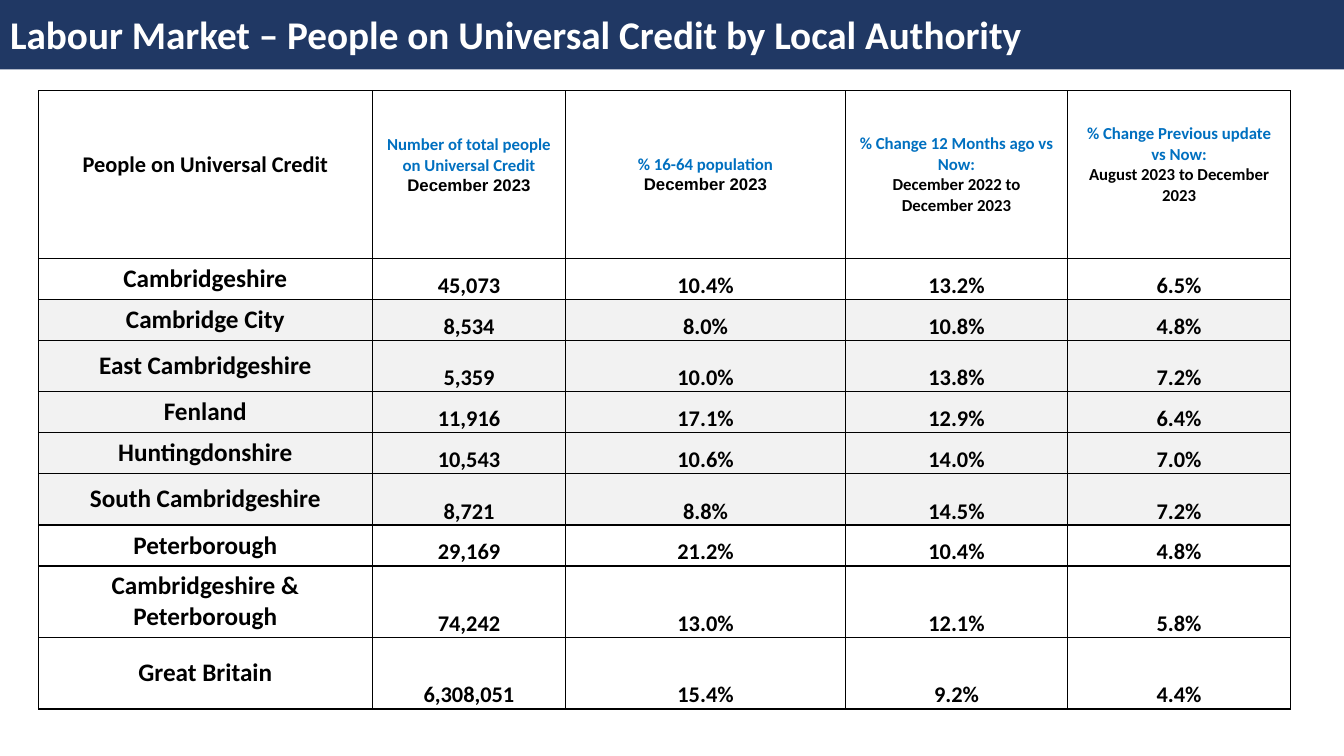
from lxml import etree
from pptx import Presentation
from pptx.dml.color import RGBColor
from pptx.enum.text import MSO_ANCHOR as ANCHOR, MSO_AUTO_SIZE as FIT, PP_ALIGN as ALIGN
from pptx.oxml.ns import qn
from pptx.util import Cm, Pt

# Content
TITLE = "Labour Market – People on Universal Credit by Local Authority"
NAVY, BLUE, BLACK, WHITE, GREY = "203864", "0070C0", "000000", "FFFFFF", "F2F2F2"

# Each header is a list of paragraphs; each paragraph a list of (text, size, colour, font)
HEADERS = [
    [[("People on Universal Credit", 16, BLACK, "Calibri")]],
    [[("Number of total people on Universal Credit ", 12, BLUE, "Calibri"),
      ("December 2023", 12, BLACK, "Arial")]],
    [[("% 16-64 population", 12, BLUE, "Calibri")],
     [("December 2023", 12, BLACK, "Arial")]],
    [[("% Change 12 Months ago vs Now:", 12, BLUE, "Calibri")],
     [("December 2022 to December 2023", 12, BLACK, "Calibri")]],
    [[("% Change Previous update vs Now:", 12, BLUE, "Calibri")],
     [("August 2023 to December 2023", 12, BLACK, "Calibri")]],
]
RAISED_HEADERS = {0, 1, 4}

AREAS = [
    ("Cambridgeshire", "45,073", "10.4%", "13.2%", "6.5%"),
    ("Cambridge City", "8,534", "8.0%", "10.8%", "4.8%"),
    ("East Cambridgeshire", "5,359", "10.0%", "13.8%", "7.2%"),
    ("Fenland", "11,916", "17.1%", "12.9%", "6.4%"),
    ("Huntingdonshire", "10,543", "10.6%", "14.0%", "7.0%"),
    ("South Cambridgeshire", "8,721", "8.8%", "14.5%", "7.2%"),
    ("Peterborough", "29,169", "21.2%", "10.4%", "4.8%"),
    ("Cambridgeshire & Peterborough", "74,242", "13.0%", "12.1%", "5.8%"),
    ("Great Britain", "6,308,051", "15.4%", "9.2%", "4.4%"),
]
DISTRICT_ROWS = range(2, 7)

COL_WIDTHS = [8.41, 4.88, 7.04, 5.61, 5.61]
ROW_HEIGHTS = [4.22, 0.89, 0.89, 1.3, 0.89, 0.89, 1.3, 0.89, 1.8, 1.8]


def rgb(color):
    return RGBColor.from_string(color)


def paint(obj, color):
    obj.fill.solid()
    obj.fill.fore_color.rgb = rgb(color)


def add_run(p, text, size, color, font):
    r = p.add_run()
    r.text = text
    for name, value in {"size": Pt(size), "name": font, "bold": True}.items():
        setattr(r.font, name, value)
    r.font.color.rgb = rgb(color)


def add_borders(cell):
    tc_pr = cell._tc.get_or_add_tcPr()
    for side in ("lnL", "lnR", "lnT", "lnB"):
        ln = etree.SubElement(tc_pr, qn(f"a:{side}"), w=str(Pt(1)))
        fill = etree.SubElement(ln, qn("a:solidFill"))
        etree.SubElement(fill, qn("a:srgbClr"), val=BLACK)


def fill_cell(cell, paragraphs, fill, layout):
    add_borders(cell)
    paint(cell, fill)
    for name, value in layout.items():
        setattr(cell, name, value)
    tf = cell.text_frame
    for i, runs in enumerate(paragraphs):
        p = tf.add_paragraph() if i else tf.paragraphs[0]
        p.alignment = ALIGN.CENTER
        for run in runs:
            add_run(p, *run)


prs = Presentation()
prs.slide_width, prs.slide_height = Cm(33.87), Cm(19.05)
slide = prs.slides.add_slide(prs.slide_layouts[5])

# Title band
title = slide.shapes.title
box = {"left": Cm(0), "top": Cm(-0.05), "width": prs.slide_width, "height": Cm(1.8)}
for name, value in box.items():
    setattr(title, name, value)
paint(title, NAVY)
tf = title.text_frame
for name, value in {"auto_size": FIT.NONE, "word_wrap": True,
                    "vertical_anchor": ANCHOR.MIDDLE}.items():
    setattr(tf, name, value)
tf.paragraphs[0].alignment = ALIGN.LEFT
add_run(tf.paragraphs[0], TITLE, 28, WHITE, "Calibri")

# Table grid
table = slide.shapes.add_table(
    len(ROW_HEIGHTS), len(COL_WIDTHS), Cm(0.97), Cm(2.29),
    Cm(sum(COL_WIDTHS)), Cm(sum(ROW_HEIGHTS))).table
table.first_row = table.horz_banding = False
for col, width in zip(table.columns, COL_WIDTHS):
    col.width = Cm(width)
for row, height in zip(table.rows, ROW_HEIGHTS):
    row.height = Cm(height)

# Header row
MIDDLE = {"vertical_anchor": ANCHOR.MIDDLE}
for c, paragraphs in enumerate(HEADERS):
    bottom = Cm(0.63 if c in RAISED_HEADERS else 0.13)
    fill_cell(table.cell(0, c), paragraphs, WHITE, MIDDLE | {"margin_bottom": bottom})

# Area rows: name centred, figures at the bottom
FIGURE = {"vertical_anchor": ANCHOR.BOTTOM, "margin_left": Cm(0.03),
          "margin_right": Cm(0.03), "margin_top": Cm(0.03), "margin_bottom": Cm(0)}
for r, area in enumerate(AREAS, 1):
    fill = GREY if r in DISTRICT_ROWS else WHITE
    for c, text in enumerate(area):
        size, layout = (16, FIGURE) if c else (18, MIDDLE)
        fill_cell(table.cell(r, c), [[(text, size, BLACK, "Calibri")]], fill, layout)

prs.save("out.pptx")
